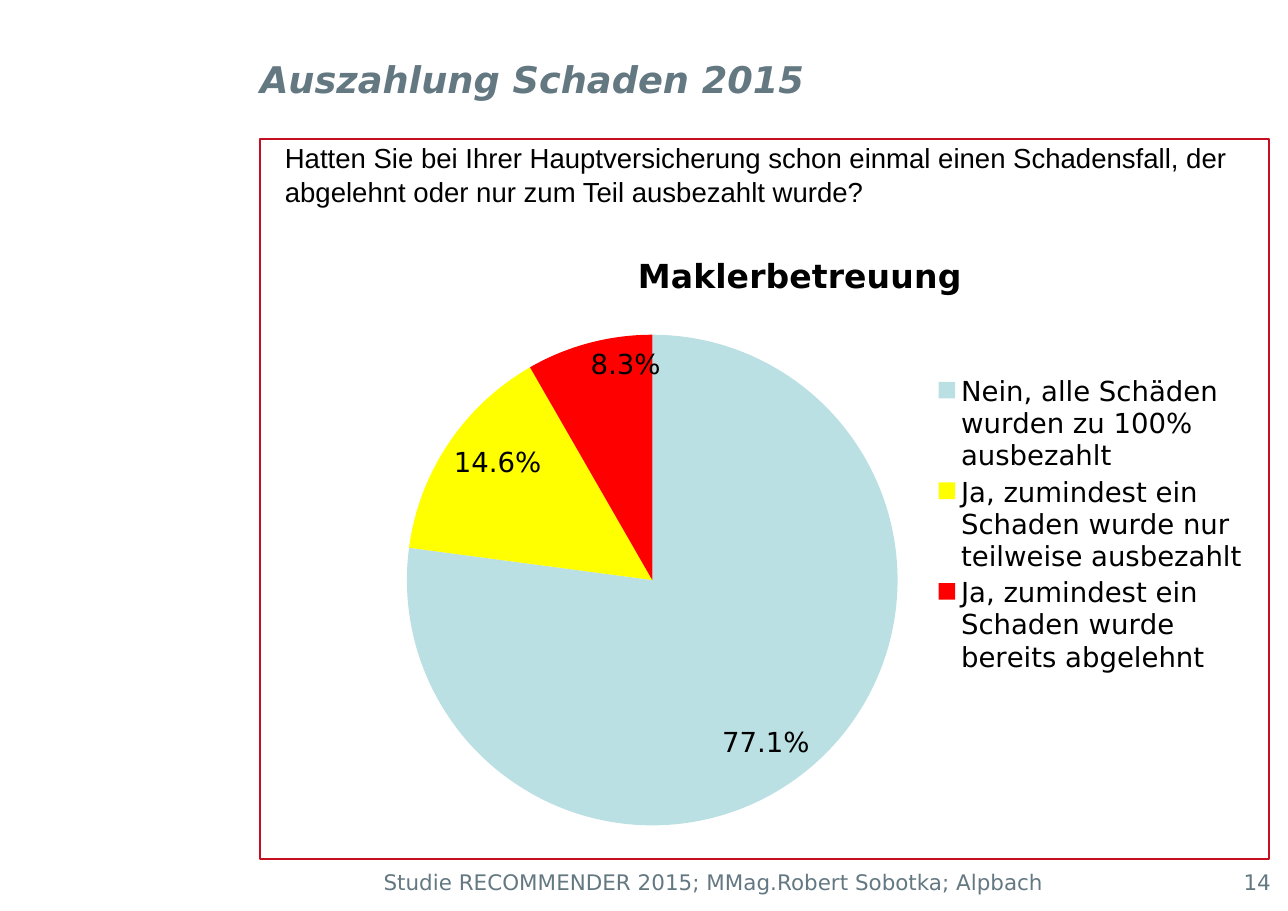
from dataclasses import dataclass

from lxml.etree import SubElement
from pptx import Presentation
from pptx.chart.data import CategoryChartData as Data
from pptx.dml.color import RGBColor as Rgb
from pptx.enum.chart import XL_CHART_TYPE as Kind, XL_LABEL_POSITION as Spot, XL_LEGEND_POSITION as Side
from pptx.enum.shapes import MSO_SHAPE as Shape
from pptx.enum.text import MSO_ANCHOR as Anchor, MSO_AUTO_SIZE as Fit, PP_ALIGN as Align
from pptx.oxml.ns import qn
from pptx.util import Pt


@dataclass(frozen=True)
class Theme:
    slate: str = "647882"
    black: str = "000000"
    frame: str = "C50E1F"
    sans: str = "DejaVu Sans"
    plain: str = "Arial"
    title: float = 24
    head: float = 21.6
    body: float = 18
    foot: float = 14


THEME = Theme()
SCALE = 914400 / 110.2
SIZE = (1288, 911)
FRAME = (260, 139, 1009, 720)
CHART = (306, 208, 950, 634)

TITLE = ("Auszahlung Schaden 2015", (260, 39, 792, 80))
QUESTION = (
    "Hatten Sie bei Ihrer Hauptversicherung schon einmal einen Schadensfall, "
    "der abgelehnt oder nur zum Teil ausbezahlt wurde?",
    (274, 136, 983, 78),
)
FOOTER = [
    ("Studie RECOMMENDER 2015; MMag.Robert Sobotka; Alpbach", (262, 864, 903, 43), Align.CENTER),
    ("14", (1212, 864, 71, 43), Align.RIGHT),
]
GROUP = "Maklerbetreuung"
ANSWERS = [
    ("Nein, alle Schäden wurden zu 100% ausbezahlt", 0.771, "BBE0E3"),
    ("Ja, zumindest ein Schaden wurde nur teilweise ausbezahlt", 0.146, "FFFF00"),
    ("Ja, zumindest ein Schaden wurde bereits abgelehnt", 0.083, "FF0000"),
]
PIE = (407, 335, 491, 491)
LEGEND = (931, 372, 318, 306)
HEAD = (632, 247)


def emu(box):
    return [round(n * SCALE) for n in box]


def style(font, size, color, face=THEME.sans, bold=False, italic=False):
    font.size, font.name = Pt(size), face
    font.bold, font.italic = bold, italic
    font.color.rgb = Rgb.from_string(color)


def fill(shape, box, text, size, color, align=Align.LEFT, **look):
    shape.left, shape.top, shape.width, shape.height = emu(box)
    frame = shape.text_frame
    frame.text = text
    frame.word_wrap = True
    frame.auto_size = Fit.NONE
    para = frame.paragraphs[0]
    para.alignment = align
    style(para.runs[0].font, size, color, **look)
    return frame


def place(part, index, box, inner=False):
    for old in part.findall(qn("c:layout")):
        part.remove(old)
    layout = SubElement(part, qn("c:layout"))
    part.insert(index, layout)
    manual = SubElement(layout, qn("c:manualLayout"))
    rules = [("layoutTarget", "inner")] if inner else []
    rules += [("xMode", "edge"), ("yMode", "edge")]
    left, top, width, height = CHART
    rules += [("x", (box[0] - left) / width), ("y", (box[1] - top) / height)]
    rules += [(key, n / full) for key, n, full in zip("wh", box[2:], (width, height))]
    for key, n in rules:
        SubElement(manual, qn("c:" + key)).set("val", n if isinstance(n, str) else f"{n:.3f}")


def draw_pie(slide):
    data = Data(number_format="0.0%")
    data.categories = [name for name, share, color in ANSWERS]
    data.add_series(GROUP, [share for name, share, color in ANSWERS])
    chart = slide.shapes.add_chart(Kind.PIE, *emu(CHART), data).chart
    style(chart.font, THEME.body, THEME.black)

    chart.has_title = True
    head = chart.chart_title.text_frame
    head.text = GROUP
    style(head.paragraphs[0].runs[0].font, THEME.head, THEME.black, bold=True)
    chart.has_legend = True
    chart.legend.position = Side.RIGHT
    chart.legend.include_in_layout = False
    style(chart.legend.font, THEME.body, THEME.black)

    plot = chart.plots[0]
    plot.vary_by_categories = True
    series = plot.series[0]
    for i, (name, share, color) in enumerate(ANSWERS):
        look = series.points[i].format
        look.fill.solid()
        look.fill.fore_color.rgb = Rgb.from_string(color)
        look.line.fill.background()
    labels = series.data_labels
    labels.show_value = True
    labels.show_percentage = False
    labels.number_format = "0.0%"
    labels.number_format_is_linked = False
    labels.position = Spot.INSIDE_END
    style(labels.font, THEME.body, THEME.black)

    root = chart.element.find(qn("c:chart"))
    place(root.find(qn("c:plotArea")), 0, PIE, inner=True)
    place(root.find(qn("c:legend")), 1, LEGEND)
    place(root.find(qn("c:title")), 1, HEAD)


def main():
    deck = Presentation()
    deck.slide_width, deck.slide_height = emu(SIZE)
    slide = deck.slides.add_slide(deck.slide_layouts[5])

    border = slide.shapes.add_shape(Shape.RECTANGLE, *emu(FRAME))
    border.shadow.inherit = False
    border.fill.background()
    border.line.color.rgb = Rgb.from_string(THEME.frame)
    border.line.width = Pt(1.75)

    text, box = TITLE
    frame = fill(slide.shapes.title, box, text, THEME.title, THEME.slate, bold=True, italic=True)
    frame.margin_left = 0
    frame.vertical_anchor = Anchor.MIDDLE

    text, box = QUESTION
    fill(slide.shapes.add_textbox(*emu(box)), box, text, THEME.body, THEME.black, face=THEME.plain)
    draw_pie(slide)

    for text, box, align in FOOTER:
        frame = fill(slide.shapes.add_textbox(*emu(box)), box, text, THEME.foot, THEME.slate, align)
        frame.margin_left = frame.margin_right = round(12 * SCALE)

    deck.save("out.pptx")


if __name__ == "__main__":
    main()
